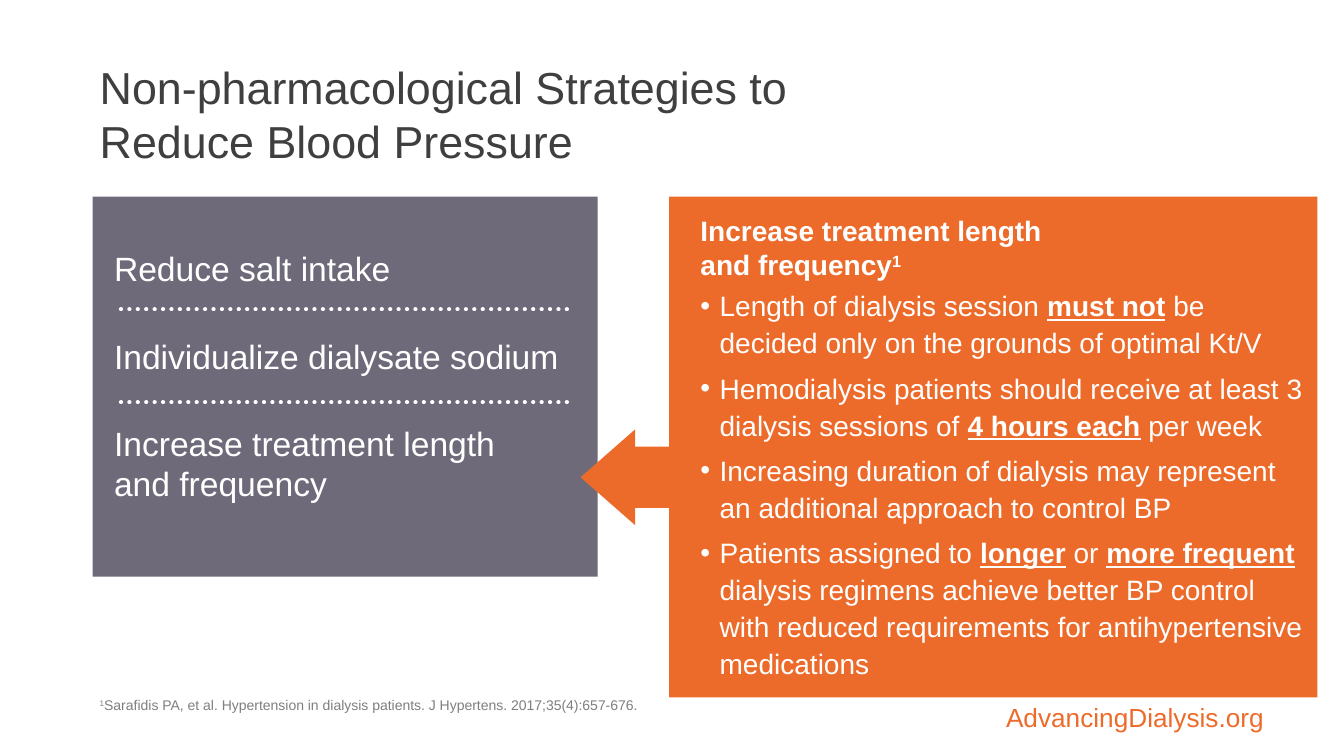
from typing import NamedTuple

from lxml import etree
from pptx import Presentation
from pptx.dml.color import RGBColor
from pptx.enum.dml import MSO_LINE
from pptx.enum.shapes import MSO_CONNECTOR, MSO_SHAPE
from pptx.enum.text import MSO_ANCHOR, MSO_AUTO_SIZE, PP_ALIGN
from pptx.oxml.ns import qn
from pptx.util import Pt

ORANGE, PURPLE, WHITE = "ED6B2A", "312B42", "FFFFFF"
DARK, GRAY = "3F3F3F", "7F7F7F"


class Box(NamedTuple):
    x: float
    y: float
    w: float
    h: float


class Run(NamedTuple):
    text: str
    strong: bool = False
    underline: bool = False
    sup: bool = False


class Style(NamedTuple):
    size: float
    color: str
    align: PP_ALIGN = PP_ALIGN.LEFT
    line: float = 1.0
    before: float = 0
    after: float = 0
    margin: float = 0
    bullet: bool = False


def key(text: str) -> Run:
    return Run(text, strong=True, underline=True)


def rgb(color: str) -> RGBColor:
    return RGBColor.from_string(color)


def place(sp, box: Box) -> None:
    sp.left, sp.top, sp.width, sp.height = (Pt(v) for v in box)


def set_frame(sp, anchor, left=5.0, top=3.6, right=5.0, bottom=3.6):
    tf = sp.text_frame
    tf.word_wrap = True
    tf.auto_size = MSO_AUTO_SIZE.NONE
    tf.vertical_anchor = anchor
    tf.margin_left, tf.margin_top = Pt(left), Pt(top)
    tf.margin_right, tf.margin_bottom = Pt(right), Pt(bottom)
    return tf


def add_para(tf, runs: list[Run], st: Style) -> None:
    first = not tf.paragraphs[0].runs
    p = tf.paragraphs[0] if first else tf.add_paragraph()
    pPr = p._p.get_or_add_pPr()
    pPr.set("marL", str(Pt(st.margin)))
    pPr.set("indent", str(-Pt(st.margin) if st.bullet else 0))
    if st.bullet:
        etree.SubElement(pPr, qn("a:buFont")).set("typeface", "Arial")
        etree.SubElement(pPr, qn("a:buChar")).set("char", "•")
    else:
        etree.SubElement(pPr, qn("a:buNone"))
    p.alignment, p.line_spacing = st.align, st.line
    p.space_before, p.space_after = Pt(0 if first else st.before), Pt(st.after)
    for run in runs:
        for i, line in enumerate(run.text.split("\n")):
            if i:
                p.add_line_break()
            r = p.add_run()
            r.text = line
            r.font.name, r.font.size = "Arial", Pt(st.size)
            r.font.color.rgb = rgb(st.color)
            r.font.bold, r.font.underline = run.strong, run.underline
            if run.sup:
                r.font._element.set("baseline", "30000")


def add_block(s, kind: MSO_SHAPE, box: Box, color: str):
    sp = s.shapes.add_shape(kind, *(Pt(v) for v in box))
    sp.shadow.inherit = False
    sp.fill.solid()
    sp.fill.fore_color.rgb = rgb(color)
    sp.line.fill.background()
    return sp


def add_dots(s, x1: float, x2: float, y: float) -> None:
    cx = s.shapes.add_connector(MSO_CONNECTOR.STRAIGHT, Pt(x1), Pt(y), Pt(x2), Pt(y))
    cx.line.color.rgb = rgb(WHITE)
    cx.line.width = Pt(3)
    cx.line.dash_style = MSO_LINE.ROUND_DOT
    spPr = cx._element.spPr
    spPr.find(qn("a:ln")).set("cap", "rnd")
    etree.SubElement(spPr, qn("a:effectLst"))


def add_text(s, box: Box):
    return s.shapes.add_textbox(*(Pt(v) for v in box))


STRATEGIES = [
    "Reduce salt intake",
    "Individualize dialysate sodium",
    "Increase treatment length \nand frequency",
]
EVIDENCE = [
    [Run("Length of dialysis session "), key("must not"),
     Run(" be decided only on the grounds of optimal Kt/V")],
    [Run("Hemodialysis patients should receive at least 3 dialysis sessions of "),
     key("4 hours each"), Run(" per week")],
    [Run("Increasing duration of dialysis may represent an additional approach "
         "to control BP")],
    [Run("Patients assigned to "), key("longer"), Run(" or "), key("more frequent"),
     Run(" dialysis regimens achieve better BP control with reduced requirements "
         "for antihypertensive medications")],
]


def main() -> None:
    prs = Presentation()
    prs.slide_width, prs.slide_height = Pt(960), Pt(540)
    s = prs.slides.add_slide(prs.slide_layouts[3])
    title, left, right = s.placeholders

    # Title
    place(title, Box(66.24, 28.8, 612, 104.4))
    tf = set_frame(title, MSO_ANCHOR.MIDDLE)
    add_para(tf, [Run("Non-pharmacological Strategies to Reduce Blood Pressure")],
             Style(32, DARK))

    # Strategy panel with dotted dividers
    panel = add_block(s, MSO_SHAPE.RECTANGLE, Box(66.24, 140.4, 360.72, 271.44), PURPLE)
    clr = panel._element.spPr.find(f"{qn('a:solidFill')}/{qn('a:srgbClr')}")
    etree.SubElement(clr, qn("a:alpha")).set("val", "70000")
    s.shapes._spTree.append(left._element)
    place(left, Box(66.96, 173.52, 358.56, 202.32))
    tf = set_frame(left, MSO_ANCHOR.TOP)
    for text in STRATEGIES:
        add_para(tf, [Run(text)], Style(24, WHITE, before=33.7, margin=9.5))
    for y in (221, 287.3):
        add_dots(s, 86.4, 406, y)

    # Evidence panel with arrow to the third strategy
    add_block(s, MSO_SHAPE.RECTANGLE, Box(478, 140.4, 463, 357.84), ORANGE)
    arrow = add_block(s, MSO_SHAPE.LEFT_ARROW, Box(414.72, 306.72, 113, 68.4), ORANGE)
    arrow.adjustments[0], arrow.adjustments[1] = 0.64, 0.57
    s.shapes._spTree.append(right._element)
    place(right, Box(495.36, 140.4, 445.64, 357.84))
    tf = set_frame(right, MSO_ANCHOR.MIDDLE, top=0, right=7.2, bottom=0)
    add_para(tf, [Run("Increase treatment length \nand frequency", strong=True),
                  Run("1", strong=True, sup=True)], Style(20, WHITE, after=3))
    for runs in EVIDENCE:
        add_para(tf, runs, Style(20, WHITE, line=1.1, after=6, margin=13.7, bullet=True))

    # Reference and site address
    tf = set_frame(add_text(s, Box(66.24, 495.36, 598.32, 22.32)), MSO_ANCHOR.TOP)
    add_para(tf, [Run("1", sup=True),
                  Run("Sarafidis PA, et al. Hypertension in dialysis patients. "
                      "J Hypertens. 2017;35(4):657-676.")], Style(10, GRAY, line=0.9))
    tf = set_frame(add_text(s, Box(584.64, 479.52, 326.16, 43.92)), MSO_ANCHOR.BOTTOM,
                   left=8, top=0, right=8, bottom=0)
    add_para(tf, [Run("AdvancingDialysis.org")],
             Style(18.7, ORANGE, align=PP_ALIGN.RIGHT, line=0.9))

    prs.save("out.pptx")


if __name__ == "__main__":
    main()
